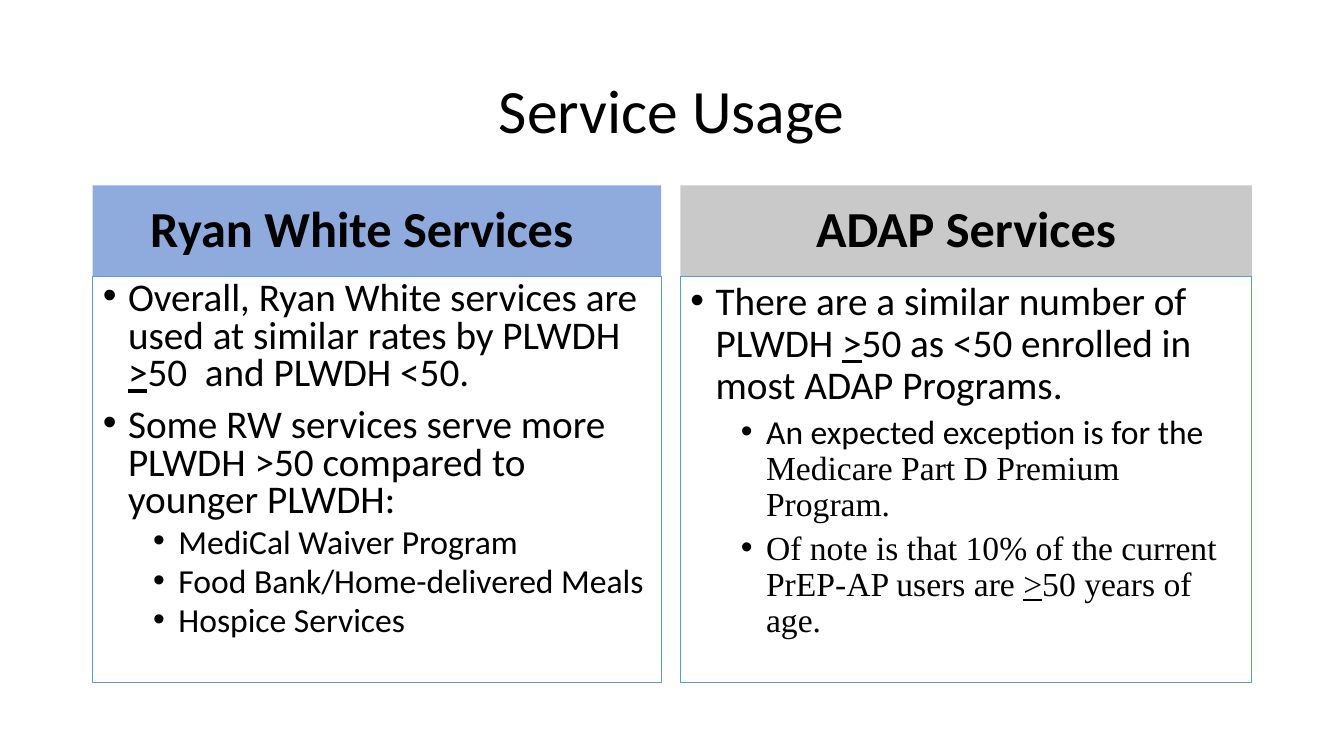
from pptx import Presentation
from pptx.dml.color import RGBColor as RGB
from pptx.enum.text import MSO_ANCHOR as ANCHOR, MSO_AUTO_SIZE as FIT, PP_ALIGN as ALIGN
from pptx.util import Pt
from lxml.etree import SubElement

COLORS = {"text": "000000", "edge": "5B9BD5", "blue": "8FAADC", "gray": "C9C9C9"}
NS = "{http://schemas.openxmlformats.org/drawingml/2006/main}"
SANS, SERIF = "Calibri", "Times New Roman"


def place(shape, left, top, width, height, anchor):
    box = {"left": left, "top": top, "width": width, "height": height}
    for name, value in box.items():
        setattr(shape, name, Pt(value))
    frame = shape.text_frame
    frame.word_wrap = True
    frame.auto_size = FIT.NONE
    frame.vertical_anchor = anchor
    return frame


def write(para, text, size, face=SANS, bold=False):
    # Text between underscores is underlined
    for i, part in enumerate(text.split("_")):
        if part:
            run = para.add_run()
            run.text = part
            style = {"name": face, "size": Pt(size), "bold": bold, "underline": i % 2 == 1}
            for name, value in style.items():
                setattr(run.font, name, value)
            run.font.color.rgb = RGB.from_string(COLORS["text"])


prs = Presentation()
prs.slide_width, prs.slide_height = Pt(960), Pt(540)
slide = prs.slides.add_slide(prs.slide_layouts[4])
holders = {p.placeholder_format.idx: p for p in slide.placeholders}

# Title
para = place(slide.shapes.title, 66, 28.8, 828, 104.4, ANCHOR.MIDDLE).paragraphs[0]
para.alignment, para.line_spacing = ALIGN.CENTER, 0.9
write(para, "Service Usage", 44)

# Columns: left, width, fill, line spacing, heading, list of (level, runs)
cols = [
    (66.24, 406.08, "blue", 0.8, "Ryan White Services\t", [
        (0, [("Overall, Ryan White services are used at similar rates by PLWDH "
              "_>_50  and PLWDH <50.", SANS)]),
        (0, [("Some RW services serve more PLWDH >50 compared to younger PLWDH:", SANS)]),
        (1, [("MediCal Waiver Program", SANS)]),
        (1, [("Food Bank/Home-delivered Meals", SANS)]),
        (1, [("Hospice Services", SANS)]),
    ]),
    (486, 408.24, "gray", 0.9, "ADAP Services", [
        (0, [("There are a similar number of PLWDH _>_50 as <50 enrolled in most "
              "ADAP Programs.", SANS)]),
        (1, [("An expected exception is for the ", SANS),
             ("Medicare Part D Premium Program.", SERIF)]),
        (1, [("Of note is that 10% of the current PrEP-AP users are _>_50 years of age.",
              SERIF)]),
    ]),
]
for n, (left, width, fill, space, head, items) in enumerate(cols):
    # Heading band
    band = holders[1 + 2 * n]
    para = place(band, left, 132.48, width, 64.8, ANCHOR.MIDDLE).paragraphs[0]
    band.fill.solid()
    band.fill.fore_color.rgb = RGB.from_string(COLORS[fill])
    para.alignment, para.line_spacing, para.space_before = ALIGN.CENTER, 0.9, Pt(10)
    write(para, head, 36, bold=True)

    # Bulleted list
    panel = holders[2 + 2 * n]
    frame = place(panel, left, 197.28, width, 290.16, ANCHOR.TOP)
    panel.line.color.rgb = RGB.from_string(COLORS["edge"])
    panel.line.width = Pt(0.75)
    for i, (level, runs) in enumerate(items):
        para = frame.add_paragraph() if i else frame.paragraphs[0]
        para.level, para.line_spacing = level, space
        para.space_before = Pt(5 if level else 10)
        props = para._p.get_or_add_pPr()
        props.set("marL", str(Pt(54 if level else 18)))
        props.set("indent", str(Pt(-18)))
        SubElement(props, NS + "buFont", typeface="Arial")
        SubElement(props, NS + "buChar", char="•")
        for text, face in runs:
            write(para, text, 24 if level else 28, face)

prs.save("out.pptx")
